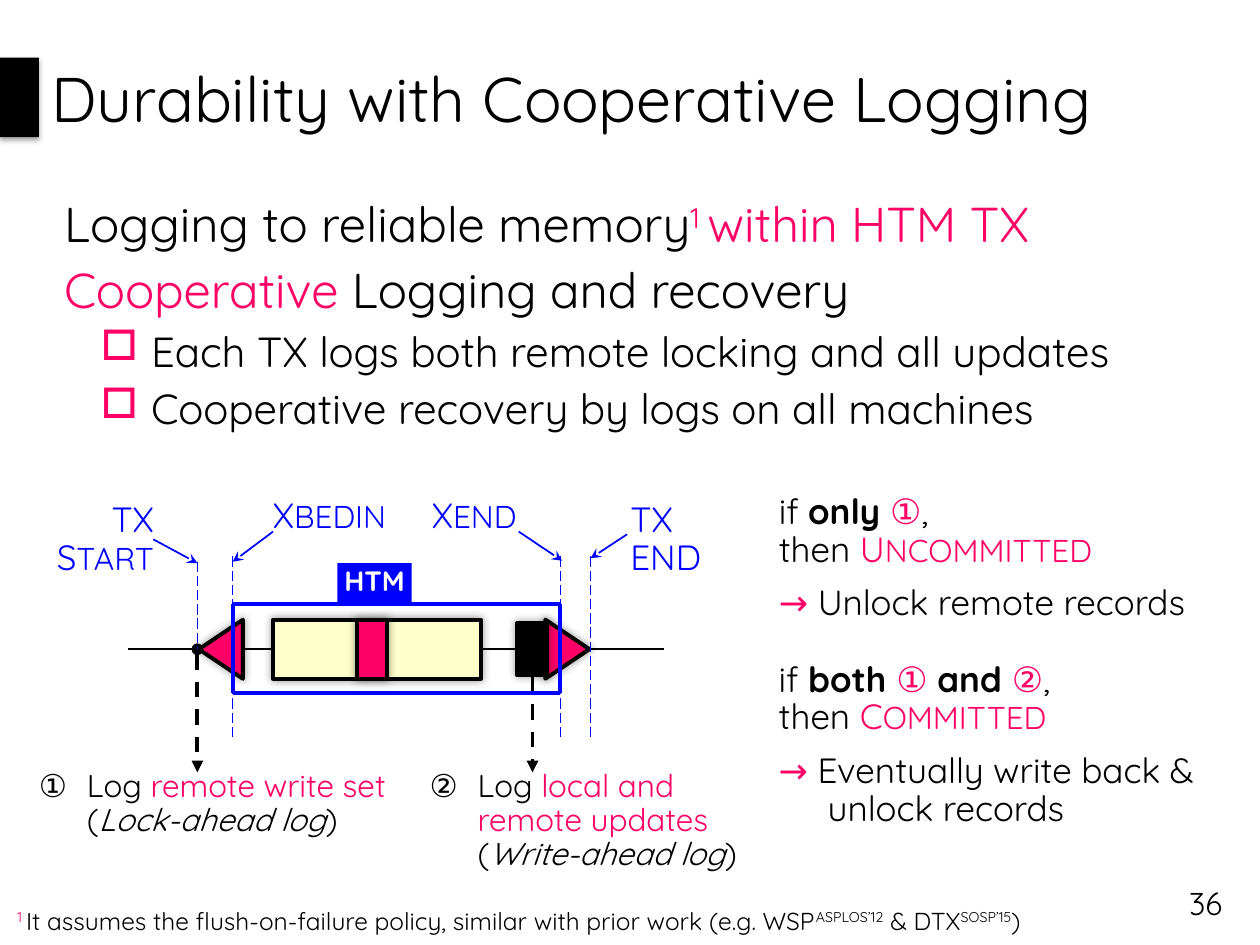
from lxml import etree
from pptx import Presentation
from pptx.dml.color import RGBColor
from pptx.enum import dml, shapes, text
from pptx.oxml.ns import qn
from pptx.util import Pt

FONT = "Quicksand"
BLACK, PINK, BLUE, CREAM, WHITE = "000000", "FF0066", "0000FF", "FFFFCC", "FFFFFF"
LONG, DASH = dml.MSO_LINE.LONG_DASH, dml.MSO_LINE.DASH
RECT, TRIANGLE = shapes.MSO_SHAPE.RECTANGLE, shapes.MSO_SHAPE.ISOSCELES_TRIANGLE
MIDDLE = text.MSO_ANCHOR.MIDDLE
RIGHT, CENTER = text.PP_ALIGN.RIGHT, text.PP_ALIGN.CENTER


def rgb(color):
    return RGBColor.from_string(color)


def sub(parent, tag, **attrs):
    return etree.SubElement(parent, qn(tag), {k: str(v) for k, v in attrs.items()})


def run(content, color=None, size=None, bold=None, italic=None, sup=False):
    return content, color, size, bold, italic, sup


def add_text(s, box, anchor=text.MSO_ANCHOR.TOP, inset=True):
    tf = s.shapes.add_textbox(*map(Pt, box)).text_frame
    tf.word_wrap, tf.vertical_anchor = True, anchor
    if not inset:
        tf.margin_left = tf.margin_top = tf.margin_right = tf.margin_bottom = 0
    return tf


def write(tf, runs, size, color=BLACK, align=None, spacing=None, before=0,
          margin=0, indent=0, bullet=None, number=None):
    """Fill the first paragraph of tf if it is empty, else add one."""
    p = tf.paragraphs[0]
    if p.runs:
        p = tf.add_paragraph()
    pPr = p._p.get_or_add_pPr()
    pPr.set("marL", str(Pt(margin)))
    pPr.set("indent", str(Pt(indent)))
    if bullet:
        sub(sub(pPr, "a:buClr"), "a:srgbClr", val=PINK)
        sub(pPr, "a:buChar", char=bullet)
    elif number:
        sub(pPr, "a:buAutoNum", type="circleNumDbPlain", startAt=number)
    p.font.name, p.font.size, p.font.color.rgb = FONT, Pt(size), rgb(color)
    p.space_before = Pt(before)
    if align:
        p.alignment = align
    if spacing:
        p.line_spacing = spacing
    for content, r_color, r_size, bold, italic, sup in runs:
        for i, part in enumerate(content.split("\n")):
            if i:
                p.add_line_break()
            r = p.add_run()
            r.text = part
            r.font.bold, r.font.italic = bold, italic
            if r_color:
                r.font.color.rgb = rgb(r_color)
            if r_size:
                r.font.size = Pt(r_size)
            if sup:
                r._r.get_or_add_rPr().set("baseline", "30000")


def add_block(s, kind, box, fill, line=None, rotation=0, shadow=None):
    """shadow is (opacity in percent, blur, distance, direction in degrees)."""
    sp = s.shapes.add_shape(kind, *map(Pt, box))
    sp.shadow.inherit = False
    sp.rotation = rotation
    sp.fill.solid()
    sp.fill.fore_color.rgb = rgb(fill)
    if line:
        sp.line.color.rgb, sp.line.width = rgb(line), Pt(2.25)
    else:
        sp.line.fill.background()
    if shadow:
        alpha, blur, dist, angle = shadow
        effects = sp._element.spPr.find(qn("a:effectLst"))
        outer = sub(effects, "a:outerShdw", blurRad=Pt(blur), dist=Pt(dist),
                    dir=angle * 60000, rotWithShape=0)
        sub(sub(outer, "a:srgbClr", val=BLACK), "a:alpha", val=alpha * 1000)
    return sp


def add_line(s, x1, y1, x2, y2, color, width, dash=None, head=None, tail=None):
    c = s.shapes.add_connector(shapes.MSO_CONNECTOR.STRAIGHT, *map(Pt, (x1, y1, x2, y2)))
    c.line.color.rgb, c.line.width = rgb(color), Pt(width)
    if dash:
        c.line.dash_style = dash
    ln = c.line._get_or_add_ln()
    if head:
        sub(ln, "a:headEnd", type=head)
    if tail:
        sub(ln, "a:tailEnd", type=tail)
    sub(c._element.spPr, "a:effectLst")


def heading(s, x, y, w, h):
    add_block(s, RECT, (x, y + 33, 22.3, 45.4), BLACK, shadow=(35, 3.1, 1.8, 90))
    tf = add_text(s, (x + 22.3, y, w - 22.3, h), MIDDLE)
    write(tf, [run("Durability with Cooperative Logging")], 36)


def key_points(s, x, y, w, h):
    tf = add_text(s, (x, y, w, h))
    write(tf, [run("Logging to reliable memory"), run("1 ", PINK, sup=True),
               run("within HTM TX", PINK)], 28, margin=13.7, indent=-13.7)
    write(tf, [run("Cooperative", PINK), run(" Logging and recovery")], 28,
          before=4, margin=13.7, indent=-13.7)
    for point in ("Each TX logs both remote locking and all updates",
                  "Cooperative recovery by logs on all machines"):
        write(tf, [run(point)], 24, before=4, margin=49.7, indent=-28.8, bullet="□")


def timeline(s, x, y):
    axis = y + 90
    start, begin, end, finish = x + 104, x + 124.2, x + 311.4, x + 328.7
    local_log = x + 295.5
    add_line(s, start, axis, start, y + 160.4, BLACK, 2.25, DASH, "oval", "triangle")
    add_line(s, local_log, axis, local_log, y + 160.4, BLACK, 2.25, DASH, tail="triangle")
    add_line(s, x + 64.4, axis, x + 370.4, axis, BLACK, 1)

    glow = (40, 5, 0, 0)
    for kind, center, w, h, fill, rotation in (
            (TRIANGLE, 117.4, 33.8, 25.2, PINK, 270),
            (RECT, 206.6, 118.8, 33.8, CREAM, 0),
            (RECT, 203.8, 17.3, 33.8, PINK, 0),
            (TRIANGLE, 315.4, 33.8, 25.2, PINK, 90),
            (RECT, 295.2, 17.3, 29.5, BLACK, 0)):
        add_block(s, kind, (x + center - w / 2, axis - h / 2, w, h), fill, BLACK,
                  rotation, glow)

    add_line(s, start, y + 40, start, axis, BLUE, 0.75, LONG)
    for guide in (begin, end, finish):
        add_line(s, guide, y + 37, guide, y + 142, BLUE, 0.75, LONG)
    top, bottom = y + 64, y + 115
    for edge in (begin, end):
        add_line(s, edge, bottom, edge, top, BLUE, 2.25)
    for edge in (top, bottom):
        add_line(s, begin, edge, end, edge, BLUE, 2.25)

    tf = add_block(s, RECT, (x + 184, y + 40.8, 42.5, 22.3), BLUE).text_frame
    tf.margin_left = tf.margin_right = 0
    tf.margin_top, tf.margin_bottom = Pt(4.3), Pt(2.9)
    tf.vertical_anchor = MIDDLE
    write(tf, [run("HTM", bold=True)], 16, WHITE, CENTER, 0.8)

    for left, label_top, w, h, runs, align, spacing in (
            (0, 5.6, 79.2, 44, [run("TX\nS"), run("TART", size=18)], RIGHT, 0.9),
            (351.4, 5.6, 51, 44, [run("TX\nEND")], None, 0.9),
            (147.2, 0.5, 67.7, 24.5, [run("X"), run("BEDIN", size=18)], None, None),
            (238, 0.5, 67.7, 24.5, [run("X"), run("END", size=18)], None, None)):
        tf = add_text(s, (x + left, y + label_top, w, h), MIDDLE, inset=False)
        write(tf, runs, 20, BLUE, align, spacing)
    for from_x, from_y, to_x, to_y in (
            (78.8, 27.2, start, 40.8), (349.6, 24.3, finish, 38),
            (147.2, 22.8, begin, 40), (287.6, 22.8, end + 1, 39.4)):
        add_line(s, x + from_x, y + from_y, to_x, y + to_y, BLUE, 1, tail="stealth")


def log_note(s, x, y, w, h, number, logged, name):
    tf = add_text(s, (x, y, w, h), MIDDLE, inset=False)
    write(tf, [run("Log "), run(logged + " ", PINK), run("("),
               run(name, italic=True), run(")")],
          18, spacing=0.9, margin=27.4, indent=-27.4, number=number)


def outcome(s, x, y, w, h, condition, initial, rest, action):
    tf = add_text(s, (x, y, w, h), MIDDLE, inset=False)
    write(tf, [run("if "), *condition, run(", \nthen "), run(initial, PINK),
               run(rest, PINK, 18)], 20, spacing=0.9)
    write(tf, [run("→ ", PINK), run(action)], 20, spacing=0.9, before=9,
          margin=28, indent=-28)


def footer(s, x, y, w, h):
    tf = add_text(s, (x, y + 12.2, 652, h - 12.2))
    write(tf, [run("1 ", PINK, sup=True),
               run("It assumes the flush-on-failure policy, similar with prior work (e.g. WSP"),
               run("ASPLOS’12", sup=True), run(" & DTX"),
               run("SOSP’15", sup=True), run(")")], 14, margin=7.2, indent=-7.2)
    tf = add_text(s, (x + w - 45.4, y, 45.4, 28.8), MIDDLE)
    write(tf, [run("36")], 18, align=RIGHT)


def main():
    prs = Presentation()
    prs.slide_width, prs.slide_height = Pt(720), Pt(540)
    s = prs.slides.add_slide(prs.slide_layouts[6])
    heading(s, 0, 0, 720, 111.6)
    key_points(s, 29.5, 107.3, 671, 172)
    timeline(s, 8.8, 281)
    log_note(s, 22.3, 440, 213, 39.6, 1, "remote write set", "Lock-ahead log")
    log_note(s, 245.5, 440, 188.6, 59, 2, "local and remote updates", "Write-ahead log")
    outcome(s, 445, 282.2, 255.6, 74.2, [run("only ", bold=True), run("①", PINK)],
            "U", "NCOMMITTED", "Unlock remote records")
    outcome(s, 445, 378, 249, 95.8,
            [run("both ", bold=True), run("① ", PINK), run("and ", bold=True),
             run("②", PINK)],
            "C", "OMMITTED", "Eventually write back & unlock records")
    footer(s, 2.9, 501.8, 702.7, 36.7)
    prs.save("out.pptx")


if __name__ == "__main__":
    main()
